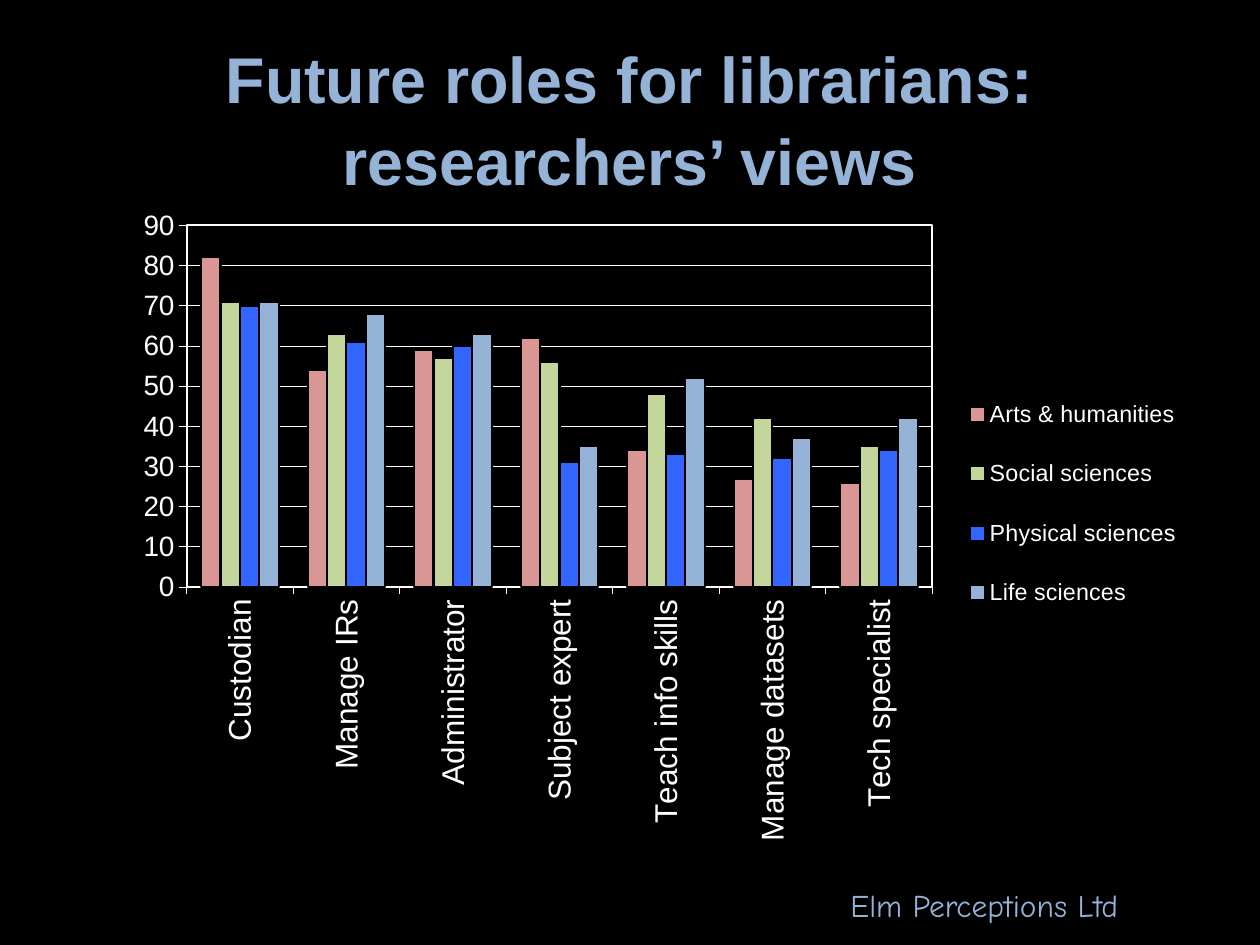
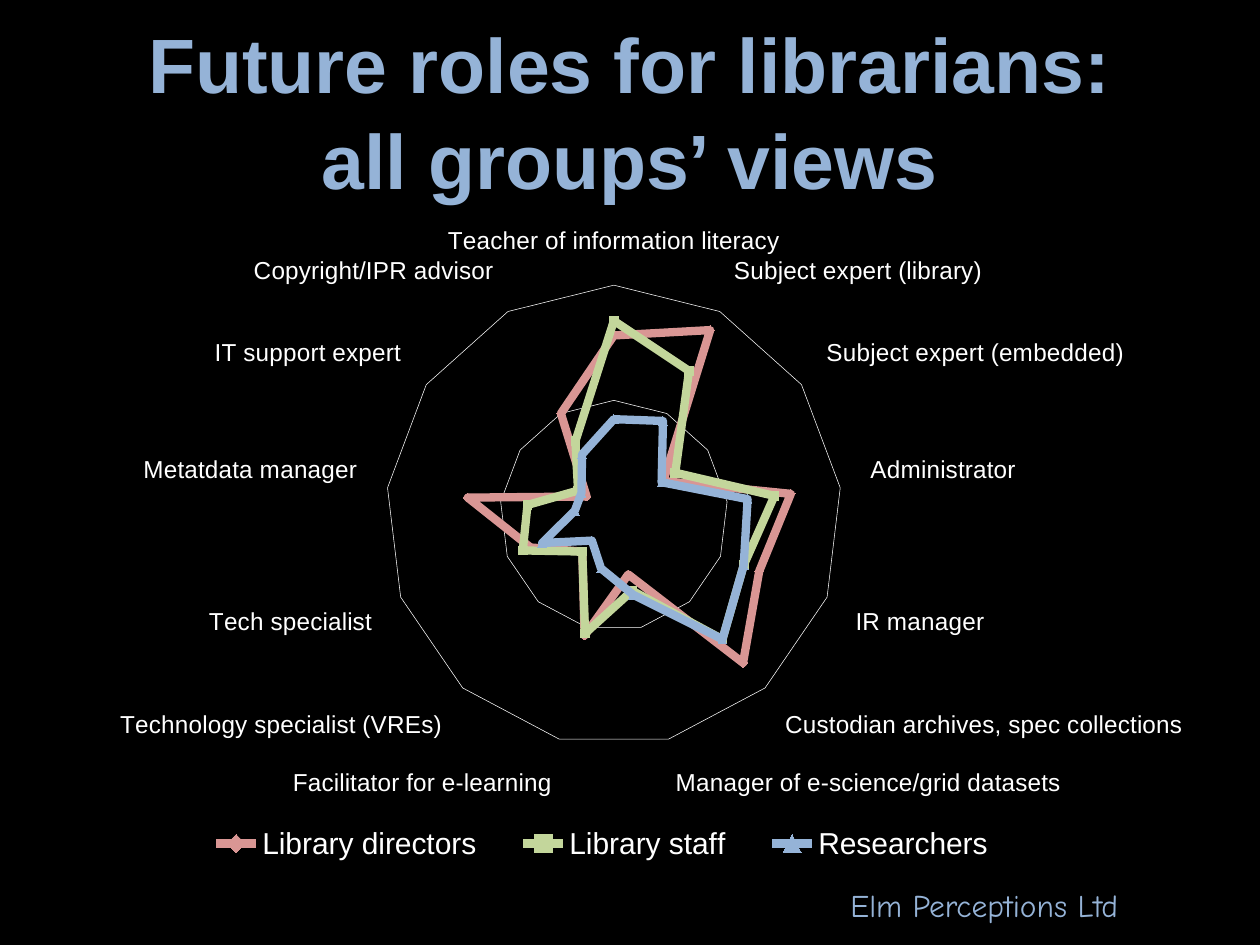
import pptx
import pptx.chart.data
import pptx.dml.color
import pptx.enum.chart
import pptx.enum.text
import pptx.oxml
import pptx.oxml.ns
import pptx.util
from pptx.util import Inches

BLACK, WHITE = "000000", "FFFFFF"
ROSE, GREEN, BLUE, SKY = "D99694", "C3D69B", "3366FF", "95B3D7"
FONT = "Arial"
ROLES = ["Custodian", "Manage IRs", "Administrator", "Subject expert",
         "Teach info skills", "Manage datasets", "Tech specialist"]
RESEARCHER_VIEWS = [
    ("Arts & humanities", ROSE, [82, 54, 59, 62, 34, 27, 26]),
    ("Social sciences", GREEN, [71, 63, 57, 56, 48, 42, 35]),
    ("Physical sciences", BLUE, [70, 61, 60, 31, 33, 32, 34]),
    ("Life sciences", SKY, [71, 68, 63, 35, 52, 37, 42]),
]
DETAILED_ROLES = [
    "Teacher of information literacy", "Subject expert (library)",
    "Subject expert (embedded)", "Administrator", "IR manager",
    "Custodian archives, spec collections", "Manager of e-science/grid datasets",
    "Facilitator for e-learning", "Technology specialist (VREs)",
    "Tech specialist", "Metatdata manager", "IT support expert",
    "Copyright/IPR advisor",
]
GROUP_VIEWS = [
    ("Library directors", ROSE, [86, 100, 29, 86, 75, 94, 29, 59, 23, 43, 71, 16, 55]),
    ("Library staff", GREEN, [93, 78, 36, 78, 67, 79, 37, 58, 23, 47, 42, 21, 40]),
    ("Researchers", SKY, [46, 51, 28, 65, 67, 79, 39, 26, 16, 37, 19, 19, 33]),
]


def color(value):
    """Turn a hex string into a colour."""
    return pptx.dml.color.RGBColor.from_string(value)


def style_font(font, size, value=WHITE, name=FONT, bold=False):
    """Set the face, size, colour and weight of a font."""
    font.name, font.size, font.bold = name, pptx.util.Pt(size), bold
    font.color.rgb = color(value)


def style_line(line, value, width):
    """Set the colour and width of a line."""
    line.color.rgb = color(value)
    line.width = pptx.util.Pt(width)


def add_text(slide, box, text, align="LEFT", anchor="TOP", spacing=1.0, **font):
    """Add a wrapped text box with one format."""
    frame = slide.shapes.add_textbox(*map(Inches, box)).text_frame
    frame.word_wrap = True
    frame.vertical_anchor = getattr(pptx.enum.text.MSO_ANCHOR, anchor)
    paragraph = frame.paragraphs[0]
    paragraph.text = text
    paragraph.alignment = getattr(pptx.enum.text.PP_ALIGN, align)
    paragraph.line_spacing = spacing
    for run in paragraph.runs:
        style_font(run.font, **font)


def add_framed_slide(presentation, title, title_height, title_size):
    """Add a black slide with its title and footer."""
    slide = presentation.slides.add_slide(presentation.slide_layouts[6])
    slide.background.fill.solid()
    slide.background.fill.fore_color.rgb = color(BLACK)
    add_text(slide, (0.5, 0.3, 9, title_height), title, align="CENTER",
             anchor="MIDDLE", spacing=1.05, size=title_size, value=SKY, bold=True)
    add_text(slide, (6.65, 6.98, 2.99, 0.4), "Elm Perceptions Ltd",
             size=18, value=SKY, name="Comic Neue")
    return slide


def set_layout(parent, index, box, inner=False):
    """Fix a chart part to a box given in fractions of the chart."""
    for layout in parent.xpath("c:layout"):
        parent.remove(layout)
    target = '<c:layoutTarget val="inner"/>' if inner else ""
    modes = '<c:xMode val="edge"/><c:yMode val="edge"/>'
    sizes = "".join(f'<c:{key} val="{value}"/>' for key, value in zip("xywh", box))
    parent.insert(index, pptx.oxml.parse_xml(
        f'<c:layout {pptx.oxml.ns.nsdecls("c")}><c:manualLayout>'
        f'{target}{modes}{sizes}</c:manualLayout></c:layout>'))


def add_role_chart(slide, box, kind, categories, views, plot_box, legend_box,
                   legend_side, legend_size, category_size, maximum, step):
    """Add a chart of views on roles with fixed plot and legend areas."""
    data = pptx.chart.data.CategoryChartData()
    data.categories = categories
    for name, _, values in views:
        data.add_series(name, values)
    chart = slide.shapes.add_chart(
        getattr(pptx.enum.chart.XL_CHART_TYPE, kind), *map(Inches, box), data).chart
    chart.has_title = False
    style_font(chart.font, 16)
    chart.plots[0].vary_by_categories = False
    chart.has_legend = True
    chart.legend.position = getattr(pptx.enum.chart.XL_LEGEND_POSITION, legend_side)
    chart.legend.include_in_layout = False
    style_font(chart.legend.font, legend_size)
    style_font(chart.category_axis.tick_labels.font, category_size)
    chart.value_axis.minimum_scale = 0
    chart.value_axis.maximum_scale = maximum
    chart.value_axis.major_unit = step
    chart.value_axis.has_major_gridlines = True
    style_line(chart.value_axis.major_gridlines.format.line, WHITE, 0.3)
    set_layout(chart.element.xpath(".//c:plotArea")[0], 0, plot_box, inner=True)
    set_layout(chart.element.xpath(".//c:legend")[0], 1, legend_box)
    return chart


def add_researcher_columns(slide, box):
    """Add the columns of researchers' views by discipline."""
    chart = add_role_chart(
        slide, box, "COLUMN_CLUSTERED", ROLES, RESEARCHER_VIEWS,
        plot_box=(0.048, 0.034, 0.708, 0.547), legend_box=(0.785, 0.25, 0.21, 0.41),
        legend_side="RIGHT", legend_size=13.3, category_size=18, maximum=90, step=10)
    plot = chart.plots[0]
    plot.gap_width, plot.overlap = 150, 0
    for series, (_, fill, _) in zip(plot.series, RESEARCHER_VIEWS):
        series.format.fill.solid()
        series.format.fill.fore_color.rgb = color(fill)
        style_line(series.format.line, BLACK, 1.21)
    for axis in (chart.category_axis, chart.value_axis):
        axis.major_tick_mark = pptx.enum.chart.XL_TICK_MARK.OUTSIDE
        style_line(axis.format.line, WHITE, 0.3)
    style_font(chart.value_axis.tick_labels.font, 16)
    chart.element.xpath(".//c:catAx/c:txPr/a:bodyPr")[0].set("rot", "-5400000")
    chart.element.xpath(".//c:plotArea")[0].append(pptx.oxml.parse_xml(
        f'<c:spPr {pptx.oxml.ns.nsdecls("c", "a")}><a:noFill/><a:ln w="15240">'
        f'<a:solidFill><a:srgbClr val="{WHITE}"/></a:solidFill></a:ln></c:spPr>'))


def add_group_radar(slide, box):
    """Add the radar of views from all groups."""
    chart = add_role_chart(
        slide, box, "RADAR_MARKERS", DETAILED_ROLES, GROUP_VIEWS,
        plot_box=(0.303, 0.106, 0.405, 0.653), legend_box=(0.12, 0.86, 0.75, 0.075),
        legend_side="BOTTOM", legend_size=17.3, category_size=14, maximum=110, step=55)
    chart.value_axis.visible = False
    markers = ("DIAMOND", "SQUARE", "TRIANGLE")
    for series, (_, stroke, _), marker in zip(chart.plots[0].series, GROUP_VIEWS, markers):
        style_line(series.format.line, stroke, 4.79)
        series.marker.style = getattr(pptx.enum.chart.XL_MARKER_STYLE, marker)
        series.marker.size = 5
        series.marker.format.fill.solid()
        series.marker.format.fill.fore_color.rgb = color(stroke)
        series.marker.format.line.color.rgb = color(stroke)


def main():
    """Build both slides and save them."""
    presentation = pptx.Presentation()
    presentation.slide_width, presentation.slide_height = Inches(10), Inches(7.5)
    slide = add_framed_slide(
        presentation, "Future roles for librarians:\vresearchers’ views", 1.25, 36.9)
    add_researcher_columns(slide, (1.08, 1.61, 8.36, 5.25))
    slide = add_framed_slide(
        presentation, "Future roles for librarians:\vall groups’ views", 1.12, 44)
    add_group_radar(slide, (0.35, 1.67, 9.04, 5.6))
    presentation.save("out.pptx")


if __name__ == "__main__":
    main()
